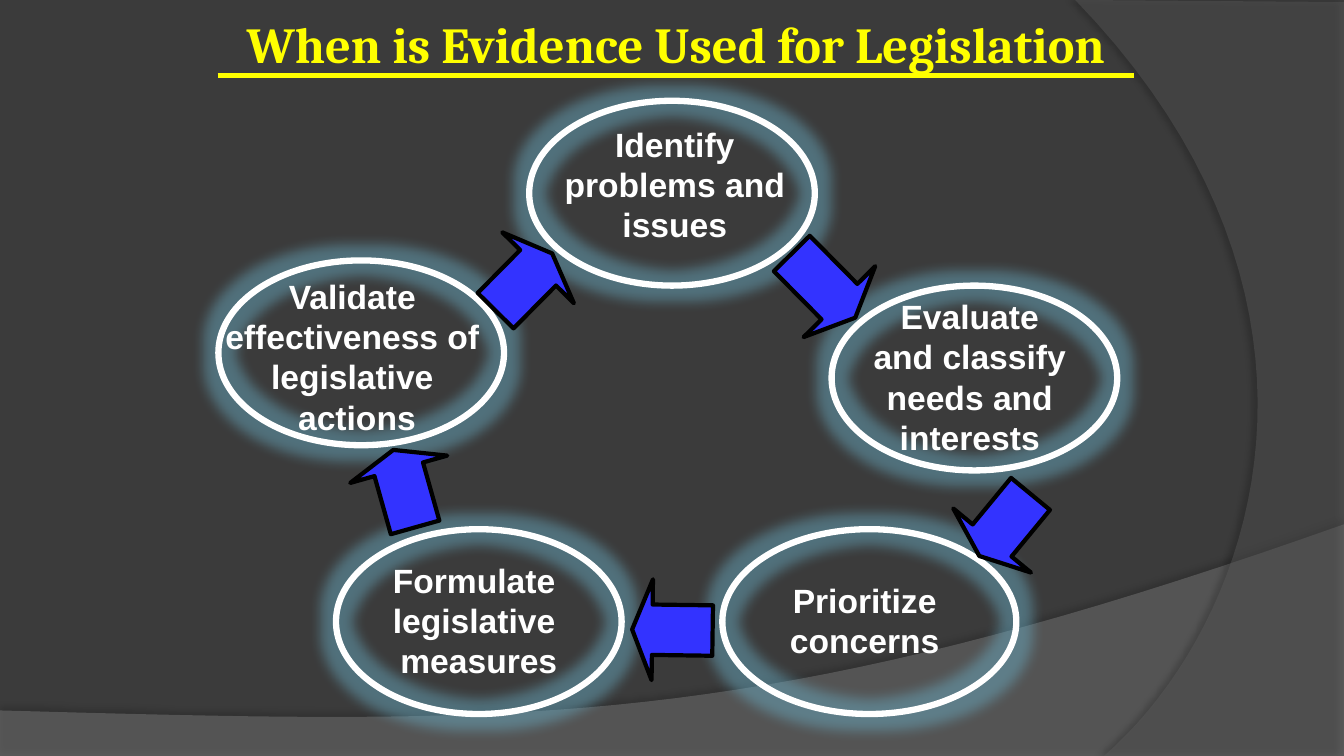
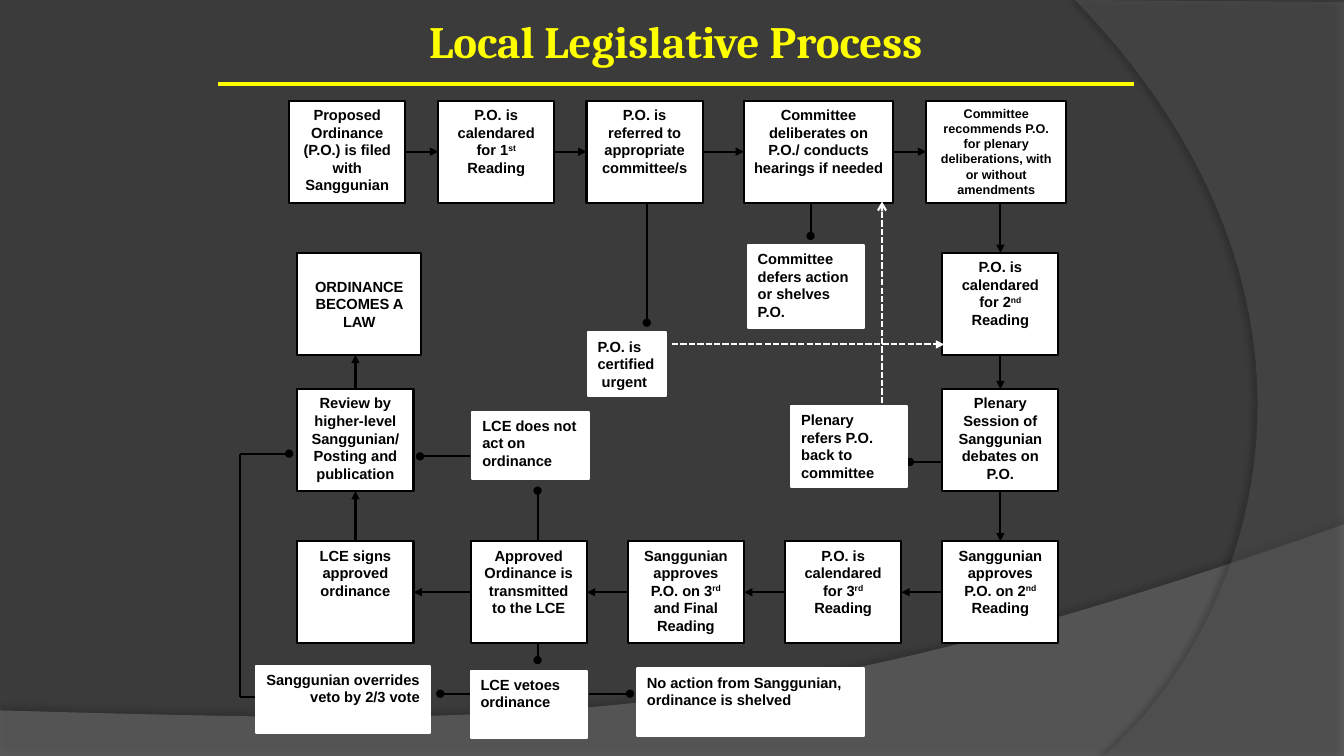
from itertools import pairwise

from lxml import etree
from pptx import Presentation
from pptx.dml.color import RGBColor
from pptx.enum.dml import MSO_LINE
from pptx.enum.shapes import MSO_CONNECTOR, MSO_SHAPE
from pptx.enum.text import MSO_ANCHOR, MSO_AUTO_SIZE, PP_ALIGN
from pptx.oxml.ns import qn
from pptx.util import Pt

COLORS = {"background": "3B3B3B", "wave": "7F7F7F", "side": "5E5E5E", "title": "FFFF00",
          "light": "FFFFFF", "dark": "000000", "arrow": "3333FF", "glow": "6BB1C9"}
WIDTH, HEIGHT = 960, 540
RULE_LEFT, RULE_RIGHT = 155.5, 810
LEFT, CENTER, RIGHT = PP_ALIGN.LEFT, PP_ALIGN.CENTER, PP_ALIGN.RIGHT

# Outlines: a point is a line, a triple of points a Bezier curve.
WAVE = [(0, 507.5), (0, HEIGHT), (WIDTH, HEIGHT), (WIDTH, 374.5),
        ((536.5, 525), (375, 517.5), (0, 507.5))]
SIDE = [(WIDTH, 1.5), (WIDTH, HEIGHT), (788.5, HEIGHT),
        ((897, 445.5), (977, 216), (768, 0)), (WIDTH, 1.5)]

# Cycle stages: left, top, width, text shift (x, y), lines
STAGE_HEIGHT = 132
STAGES = [
    (378, 72, 204, (2, -6.5), ["Identify", " problems and ", "issues"]),
    (594, 204, 204, (0, -1), ["Evaluate ", "and classify ", "needs and ", "interests "]),
    (516, 378, 210, (0, -1), ["Prioritize ", "concerns "]),
    (240, 378, 204, (0, -1), ["Formulate ", "legislative ", "measures"]),
    (156, 186, 204, (-3, 2.5), ["Validate ", "effectiveness of ", "legislative ", "actions"]),
]
# Cycle arrows: left, top, width, rotation
CYCLE_ARROWS = [(556, 168, 64.5, 45.3), (689, 339, 57.5, 129.5), (451.5, 414, 57.5, 180.8),
                (260, 313, 57.5, 254.3), (345.5, 165.5, 57.5, 314.7)]

# Process steps: left, top, width, size, text with ^superscript^
BOX_WIDTH, BOX_HEIGHT = 83, 72.7
ROW_1, ROW_2, ROW_3, ROW_4 = 72, 180.7, 278, 386.7
COLUMNS = [212.4] + [336.2 + 112.3 * i for i in range(4)]
STEPS = [
    (206.6, ROW_1, BOX_WIDTH, 10.5, "Proposed Ordinance (P.O.) is filed with Sanggunian"),
    (313, ROW_1, BOX_WIDTH, 10.5, "P.O. is calendared for 1^st^ Reading"),
    (419, ROW_1, BOX_WIDTH, 10.5, "P.O. is referred to appropriate committee/s"),
    (531.4, ROW_1, 106.6, 10.5, "Committee deliberates on P.O./ conducts hearings if needed"),
    (661.6, ROW_1, 100, 9,
     "Committee recommends P.O. for plenary deliberations, with or without amendments"),
    (COLUMNS[4], ROW_2, BOX_WIDTH, 10.5, "P.O. is calendared for 2^nd^ Reading"),
    (COLUMNS[4], ROW_3, BOX_WIDTH, 10.5, "Plenary Session of Sanggunian debates on P.O."),
    (COLUMNS[4], ROW_4, BOX_WIDTH, 10.5, "Sanggunian approves P.O. on 2^nd^ Reading"),
    (COLUMNS[3], ROW_4, BOX_WIDTH, 10.5, "P.O. is calendared for 3^rd^ Reading"),
    (COLUMNS[2], ROW_4, BOX_WIDTH, 10.5, "Sanggunian approves P.O. on 3^rd^ and Final Reading"),
    (COLUMNS[1], ROW_4, BOX_WIDTH, 10.5, "Approved Ordinance is transmitted to the LCE"),
    (COLUMNS[0], ROW_4, BOX_WIDTH, 10.5, "LCE signs approved ordinance"),
    (COLUMNS[0], ROW_3, BOX_WIDTH, 10.5,
     "Review by higher-level Sanggunian/Posting and publication"),
    (COLUMNS[0], ROW_2, 88.6, 10.5, "ORDINANCE BECOMES A LAW"),
]
# Side notes: left, top, width, height, alignment, text
NOTES = [
    (534.2, 175, BOX_WIDTH, 59, LEFT, "Committee defers action or shelves P.O."),
    (419.8, 237.5, 56.2, 45.4, LEFT, "P.O. is\ncertified\n urgent"),
    (565.2, 290, BOX_WIDTH, 58, LEFT, "Plenary refers P.O. back to committee"),
    (336.2, 479, BOX_WIDTH, 48, LEFT, "LCE vetoes ordinance"),
    (183, 475.5, 124, 48, RIGHT, "Sanggunian overrides veto by 2/3 vote"),
    (455, 477.5, 162, 48, LEFT, "No action from Sanggunian, ordinance is shelved"),
    (337.5, 294, BOX_WIDTH, 48, LEFT, "LCE does not act on ordinance"),
]
# Branches: start, end
BRANCHES = [
    ((579, 145), (579, 168.5)), ((462, 144), (462, 230.5)), ((672, 330), (650, 330)),
    ((384, 459.5), (384, 471.5)), ((336, 495.5), (314.5, 495.5)),
    ((421, 495.5), (450, 495.5)), ((384, 386.5), (384, 350.5)), ((336, 326), (300, 326)),
]
OVERRIDE_ROUTE = [(183, 498), (171.5, 498), (171.5, 324), (206.5, 324)]
SHORTCUTS = [((480, 246), (674.5, 246), "triangle"), ((630, 288), (630, 144), "arrow")]


def color(name):
    return RGBColor.from_string(COLORS[name])


def paint(shape, fill=None, line=None, width=1.5):
    """Set fill and outline; None leaves either out."""
    shape.shadow.inherit = False
    for part, name in ((shape.fill, fill), (shape.line.fill, line)):
        if name:
            part.solid()
            part.fore_color.rgb = color(name)
        else:
            part.background()
    if line:
        shape.line.width = Pt(width)


def add_effect(shape, tag, name, alpha, **attributes):
    effects = shape.element.spPr.find(qn("a:effectLst"))
    effect = etree.SubElement(effects, qn(tag), {k: str(v) for k, v in attributes.items()})
    tint = etree.SubElement(effect, qn("a:srgbClr"), val=COLORS[name])
    etree.SubElement(tint, qn("a:alpha"), val=str(alpha * 1000))


def add_shape(slide, kind, left, top, width, height):
    return slide.shapes.add_shape(kind, Pt(left), Pt(top), Pt(width), Pt(height))


def format_text(paragraph, size, name, font="Arial", align=CENTER):
    paragraph.alignment = align
    for run in paragraph.runs:
        run.font.name, run.font.size, run.font.bold = font, Pt(size), True
        run.font.color.rgb = color(name)


def add_line(slide, start, end, name="dark", head=None, width=1.5, dashed=False):
    line = slide.shapes.add_connector(
        MSO_CONNECTOR.STRAIGHT, *(Pt(value) for value in (*start, *end)))
    line.line.color.rgb = color(name)
    line.line.width = Pt(width)
    if dashed:
        line.line.dash_style = MSO_LINE.SQUARE_DOT
    properties = line.element.spPr
    if head:
        etree.SubElement(properties.find(qn("a:ln")), qn("a:tailEnd"), type=head)
    etree.SubElement(properties, qn("a:effectLst"))


def flatten(outline, steps=40):
    """Turn an outline with Bezier curves into plain points."""
    points = []
    for item in outline:
        if not isinstance(item[0], tuple):
            points.append(item)
            continue
        controls = (points[-1], *item)
        for i in range(1, steps + 1):
            t = i / steps
            weights = ((1 - t) ** 3, 3 * t * (1 - t) ** 2, 3 * t * t * (1 - t), t ** 3)
            points.append(tuple(sum(w * p[axis] for w, p in zip(weights, controls))
                                for axis in (0, 1)))
    return [(Pt(x), Pt(y)) for x, y in points]


def add_backdrop(presentation, slide):
    """Put the two translucent sweeps on the master, behind everything."""
    master = presentation.slide_master
    master.background.fill.solid()
    master.background.fill.fore_color.rgb = color("background")
    sweeps = [(WAVE, "wave", 45, 35, 3.5, 270), (SIDE, "side", 40, 45, 4, 180)]
    for i, (outline, name, alpha, shade, distance, angle) in enumerate(sweeps):
        start, *points = flatten(outline)
        builder = slide.shapes.build_freeform(*start)
        builder.add_line_segments(points, close=True)
        sweep = builder.convert_to_shape()
        paint(sweep, fill=name)
        tint = sweep.element.spPr.find(qn("a:solidFill")).find(qn("a:srgbClr"))
        etree.SubElement(tint, qn("a:alpha"), val=str(alpha * 1000))
        add_effect(sweep, "a:outerShdw", "dark", shade, blurRad=Pt(4), dist=Pt(distance),
                   dir=angle * 60000, rotWithShape=0)
        sweep.element.nvSpPr.cNvPr.set("id", str(100 + i))
        master.shapes.element.insert(2 + i, sweep.element)


def add_titled_slide(presentation, text, size, rule_top):
    slide = presentation.slides.add_slide(presentation.slide_layouts[5])
    title = slide.shapes.title
    title.left, title.top = Pt(RULE_LEFT), Pt(6)
    title.width, title.height = Pt(RULE_RIGHT - RULE_LEFT), Pt(90)
    frame = title.text_frame
    frame.text = text
    frame.auto_size = MSO_AUTO_SIZE.NONE
    frame.vertical_anchor = MSO_ANCHOR.TOP
    format_text(frame.paragraphs[0], size, "title", "Cambria")
    add_line(slide, (RULE_LEFT, rule_top), (RULE_RIGHT, rule_top), "title", width=3)
    return slide


def add_stage(slide, left, top, width, shift, lines):
    stage = add_shape(slide, MSO_SHAPE.OVAL, left, top, width, STAGE_HEIGHT)
    paint(stage, line="light", width=4.5)
    add_effect(stage, "a:glow", "glow", 45, rad=Pt(18))
    frame = stage.text_frame
    frame.text = "\n".join(lines)
    frame.word_wrap = False
    frame.vertical_anchor = MSO_ANCHOR.MIDDLE
    x, y = shift
    frame.margin_left, frame.margin_right = Pt(max(2 * x, 0)), Pt(max(-2 * x, 0))
    frame.margin_top, frame.margin_bottom = Pt(max(2 * y, 0)), Pt(max(-2 * y, 0))
    for paragraph in frame.paragraphs:
        format_text(paragraph, 24, "light")


def add_cycle_arrow(slide, left, top, width, rotation):
    arrow = add_shape(slide, MSO_SHAPE.RIGHT_ARROW, left, top, width, 72)
    arrow.adjustments[1] = 0.25
    arrow.rotation = rotation
    paint(arrow, "arrow", "dark", 3)


def add_box(slide, left, top, width, height, text, size=10.5, line="dark", align=CENTER):
    box = add_shape(slide, MSO_SHAPE.RECTANGLE, left, top, width, height)
    paint(box, "light", line)
    frame = box.text_frame
    frame.word_wrap = "\n" not in text
    frame.vertical_anchor = MSO_ANCHOR.TOP
    for i, content in enumerate(text.split("\n")):
        paragraph = frame.add_paragraph() if i else frame.paragraphs[0]
        for j, part in enumerate(content.split("^")):
            run = paragraph.add_run()
            run.text = part
            if j % 2:
                run.font._element.set("baseline", "30000")
        format_text(paragraph, size, "dark", align=align)
    return box


def flow_ends(box, following):
    """Return the facing edge points of two steps that follow each other."""
    (x1, y1, w1, *_), (x2, y2, w2, *_) = box, following
    if y1 == y2:
        y = y1 + BOX_HEIGHT / 2
        return ((x1 + w1, y), (x2, y)) if x1 < x2 else ((x1, y), (x2 + w2, y))
    x = x1 + w1 / 2 if w1 < w2 else x2 + w2 / 2
    if y1 < y2:
        return (x, y1 + BOX_HEIGHT), (x, y2)
    return (x, y1), (x, y2 + BOX_HEIGHT)


def build_cycle(slide):
    for stage in STAGES:
        add_stage(slide, *stage)
    for arrow in CYCLE_ARROWS:
        add_cycle_arrow(slide, *arrow)


def build_process(slide):
    for box, following in pairwise(STEPS):
        add_line(slide, *flow_ends(box, following), head="triangle")
    for start, end in BRANCHES:
        add_line(slide, start, end, head="oval")
    for start, end in pairwise(OVERRIDE_ROUTE):
        add_line(slide, start, end, head="oval" if end == OVERRIDE_ROUTE[-1] else None)
    for left, top, width, size, text in STEPS:
        box = add_box(slide, left, top, width, BOX_HEIGHT, text, size)
    box.text_frame.vertical_anchor = MSO_ANCHOR.MIDDLE  # the final step
    for left, top, width, height, align, text in NOTES:
        add_box(slide, left, top, width, height, text, line="light", align=align)
    for start, end, head in SHORTCUTS:
        add_line(slide, start, end, "light", head, dashed=True)


def main():
    presentation = Presentation()
    presentation.slide_width, presentation.slide_height = Pt(WIDTH), Pt(HEIGHT)
    cycle = add_titled_slide(presentation, "When is Evidence Used for Legislation", 36, 54)
    add_backdrop(presentation, cycle)
    build_cycle(cycle)
    build_process(add_titled_slide(presentation, "Local Legislative Process", 32, 60))
    presentation.save("out.pptx")


if __name__ == "__main__":
    main()
